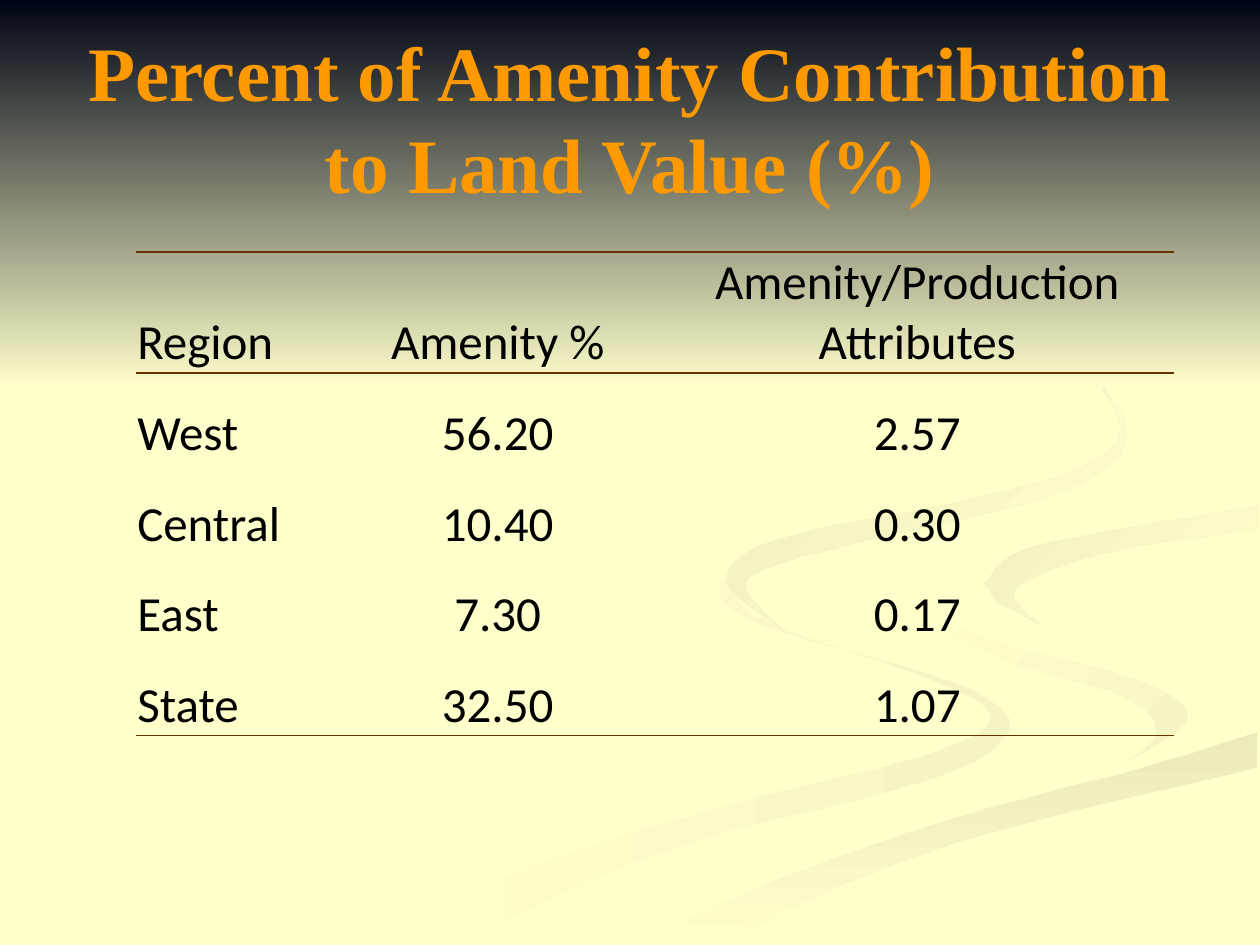
from dataclasses import dataclass

from lxml.etree import SubElement
from pptx import Presentation
from pptx.dml.color import RGBColor
from pptx.enum.shapes import MSO_SHAPE as Preset
from pptx.enum.text import MSO_ANCHOR as Anchor, PP_ALIGN as Align
from pptx.oxml.ns import qn
from pptx.util import Pt

PX = 9144  # 100 px to the inch
WIDTH, HEIGHT = 1000, 750
CREAM, RULE = "FFFFCC", "663300"
CURVE_STEPS = 6
Point = tuple[float, float]
Edge = list[Point]


@dataclass
class Ribbon:
    start: str
    end: str
    angle: int  # clockwise, in degrees
    edges: list[Edge]  # smooth curves, joined end to end


def rgb(colour: str) -> RGBColor:
    return RGBColor.from_string(colour)


def smooth(edge: Edge) -> Edge:
    """Catmull-Rom curve through the points of one edge."""
    padded = [edge[0], *edge, edge[-1]]
    curve = [edge[0]]
    for a, b, c, d in zip(padded, padded[1:], padded[2:], padded[3:]):
        for step in range(1, CURVE_STEPS + 1):
            t = step / CURVE_STEPS
            curve.append(tuple(
                q + t * ((r - p) + t * ((2 * p - 5 * q + 4 * r - s) + t * (3 * q - p - 3 * r + s))) / 2
                for p, q, r, s in zip(a, b, c, d)))
    return curve


def paint(shape, start: str, end: str, angle: int) -> None:
    shape.shadow.inherit = False
    shape.line.fill.background()
    if start == end:
        shape.fill.solid()
        shape.fill.fore_color.rgb = rgb(start)
        return
    shape.fill.gradient()
    shape.fill.gradient_angle = -angle % 360
    for stop, colour in zip(shape.fill.gradient_stops, (start, end)):
        stop.color.rgb = rgb(colour)


def draw_ribbon(slide, ribbon: Ribbon) -> None:
    outline = [point for edge in ribbon.edges for point in smooth(edge)]
    builder = slide.shapes.build_freeform(*outline[0], scale=PX)
    builder.add_line_segments(outline[1:], close=True)
    paint(builder.convert_to_shape(), ribbon.start, ribbon.end, ribbon.angle)


def style_text(frame, font: str, size: int, colour: str, align: Align, bold: bool = False) -> None:
    for paragraph in frame.paragraphs:
        paragraph.alignment = align
        for run in paragraph.runs:
            run.font.name, run.font.size, run.font.bold = font, Pt(size), bold
            run.font.color.rgb = rgb(colour)


def set_borders(cell, ruled_sides: str) -> None:
    properties = cell._tc.get_or_add_tcPr()
    for index, side in enumerate("LRTB"):
        border = SubElement(properties, qn(f"a:ln{side}"), w=str(Pt(1)))
        properties.insert(index, border)
        if side in ruled_sides:
            SubElement(SubElement(border, qn("a:solidFill")), qn("a:srgbClr"), val=RULE)
        else:
            SubElement(border, qn("a:noFill"))


def draw_table(slide, rows: list[tuple[str, ...]], left: int, top: int,
               widths: list[int], heights: list[int]) -> None:
    frame = slide.shapes.add_table(len(rows), len(widths), left * PX, top * PX,
                                   sum(widths) * PX, sum(heights) * PX)
    table = frame.table
    table.first_row = table.horz_banding = False
    for column, width in zip(table.columns, widths):
        column.width = width * PX
    rules = {0: "TB", 1: "T", len(rows) - 1: "B"}
    for r, (values, height) in enumerate(zip(rows, heights)):
        table.rows[r].height = height * PX
        for c, value in enumerate(values):
            cell = table.cell(r, c)
            cell.text_frame.text = value
            cell.vertical_anchor = Anchor.BOTTOM
            cell.margin_left = cell.margin_right = cell.margin_top = PX
            cell.margin_bottom = 0
            cell.fill.background()
            set_borders(cell, rules.get(r, ""))
            style_text(cell.text_frame, "Calibri", 28, "000000", Align.CENTER if c else Align.LEFT)


# Edges shared by neighbouring ribbons
BEND_OUTER = [(724, 464), (745, 490), (811, 515), (905, 540), (943, 570), (894, 605)]
SWEEP_TOP = [(503, 749), (630, 693), (765, 647), (904, 610), (998, 581)]
HOOK_TOP = [(781, 463), (811, 437), (899, 418), (998, 402)]

RIBBONS = [
    # Long left tail
    Ribbon(CREAM, "F5F5C4", 0, [
        [(575, 459), (594, 485), (642, 507), (731, 533), (781, 553), (800, 581), (740, 618),
         (532, 674), (361, 749)],
        [(300, 749), (417, 690), (579, 639), (739, 598), (786, 566), (714, 530), (602, 495), (570, 472)]]),
    # Right-hand bend
    Ribbon(CREAM, "F5F5C4", 45, [
        BEND_OUTER, [(894, 605), (918, 581), (892, 553), (797, 524), (733, 488), (724, 464)]]),
    # Lower right sweep
    Ribbon("EAEABB", CREAM, 90, [SWEEP_TOP, [(998, 609), (785, 661), (649, 710), (571, 749)]]),
    # Plain band between the bends
    Ribbon(CREAM, CREAM, 0, [
        BEND_OUTER + [(663, 668), (477, 749)], SWEEP_TOP,
        [(998, 538), (904, 519), (817, 492), (781, 463)], HOOK_TOP,
        [(998, 387), (874, 408), (770, 427), (724, 464)]]),
    # Upper right hook
    Ribbon("F1F1C1", CREAM, 45, [
        HOOK_TOP, [(998, 420), (878, 439), (806, 468), (826, 496)], [(791, 478), (781, 463)]]),
    # Central curl
    Ribbon("EDEDBE", CREAM, 45, [
        [(762, 233), (843, 275), (894, 344), (841, 391), (683, 430), (606, 452), (593, 470), (622, 500)],
        [(622, 500), (577, 462), (615, 429), (763, 398), (861, 370), (889, 335), (846, 279), (762, 233)]]),
]

REGION_ROWS = [
    ("Region", "Amenity %", "Amenity/Production\nAttributes"),
    ("West", "56.20", "2.57"),
    ("Central", "10.40", "0.30"),
    ("East", "7.30", "0.17"),
    ("State", "32.50", "1.07"),
]


def main() -> None:
    deck = Presentation()
    deck.slide_width, deck.slide_height = WIDTH * PX, HEIGHT * PX
    slide = deck.slides.add_slide(deck.slide_layouts[6])

    # Background, ribbons and the dark fade across the top
    slide.background.fill.solid()
    slide.background.fill.fore_color.rgb = rgb(CREAM)
    for ribbon in RIBBONS:
        draw_ribbon(slide, ribbon)
    fade = slide.shapes.add_shape(Preset.RECTANGLE, 0, 0, WIDTH * PX, 308 * PX)
    paint(fade, "000514", CREAM, 90)

    # Title
    title = slide.shapes.add_textbox(50 * PX, 30 * PX, 900 * PX, 125 * PX).text_frame
    title.word_wrap = True
    title.vertical_anchor = Anchor.MIDDLE
    title.text = "Percent of Amenity Contribution to Land Value (%)"
    style_text(title, "Times New Roman", 44, "FF9900", Align.CENTER, bold=True)

    # Amenity share by region
    draw_table(slide, REGION_ROWS, 108, 200, [158, 258, 408], [96] + [72] * 4)

    deck.save("out.pptx")


if __name__ == "__main__":
    main()
